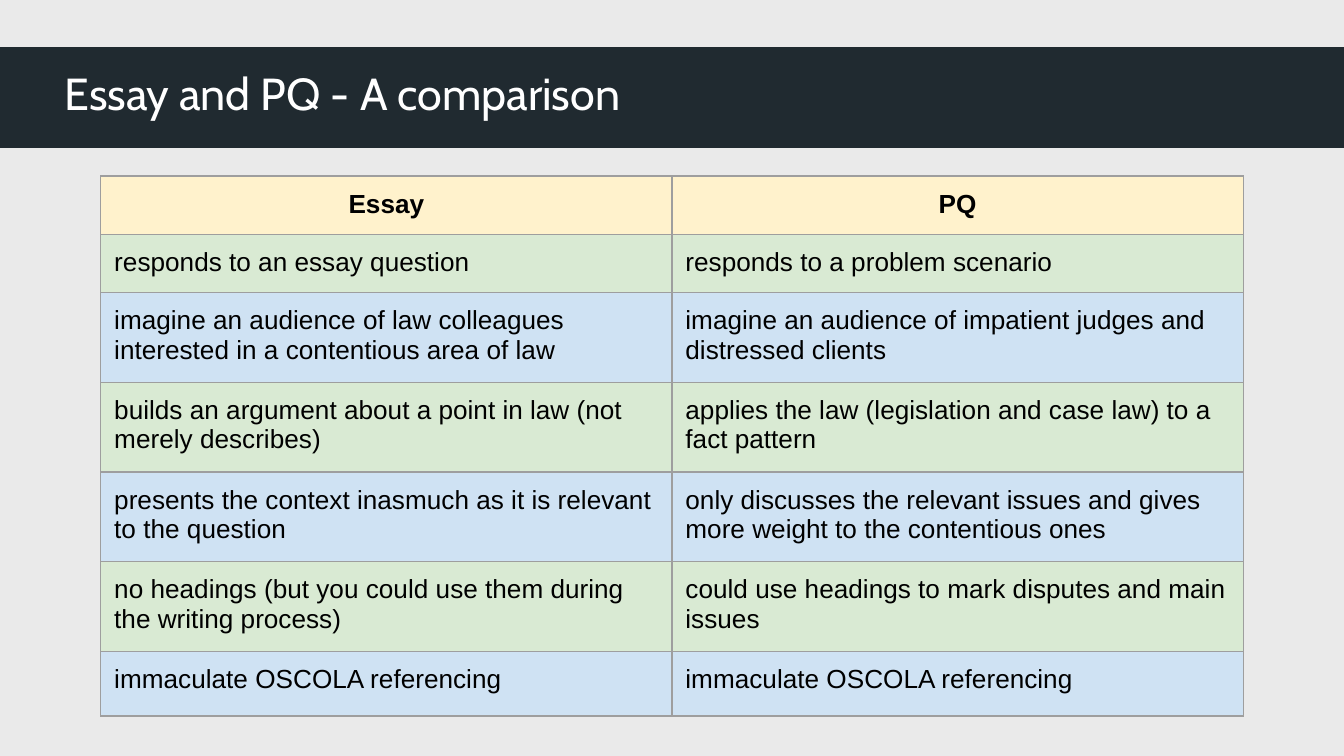
from dataclasses import dataclass

from lxml.etree import SubElement
from pptx import Presentation
from pptx.dml.color import RGBColor
from pptx.enum.shapes import MSO_SHAPE as Shape
from pptx.enum.text import MSO_ANCHOR as Anchor, PP_ALIGN as Align
from pptx.oxml.ns import qn
from pptx.util import Inches, Pt


@dataclass(frozen=True)
class Theme:
    background: str = "EAEAEA"
    band: str = "202A30"
    title_text: str = "FFFFFF"
    body_text: str = "000000"
    border: str = "9E9E9E"
    header_fill: str = "FFF2CC"
    row_fills: tuple = ("D9EAD3", "CFE2F3")
    title_font: str = "Cabin"
    body_font: str = "Arial"
    title_size: float = 24
    body_size: float = 14
    border_width: float = 0.75


HEADINGS = ("Essay", "PQ")
COMPARISON = [
    ("responds to an essay question", "responds to a problem scenario"),
    ("imagine an audience of law colleagues interested in a contentious area of law",
     "imagine an audience of impatient judges and distressed clients"),
    ("builds an argument about a point in law (not merely describes)",
     "applies the law (legislation and case law) to a fact pattern"),
    ("presents the context inasmuch as it is relevant to the question",
     "only discusses the relevant issues and gives more weight to the contentious ones"),
    ("no headings (but you could use them during the writing process)",
     "could use headings to mark disputes and main issues"),
    ("immaculate OSCOLA referencing", "immaculate OSCOLA referencing"),
]
ROW_HEIGHTS = (0.4, 0.4, 0.62, 0.62, 0.62, 0.62, 0.48)


def set_fill(fill, color):
    fill.solid()
    fill.fore_color.rgb = RGBColor.from_string(color)


def write_text(frame, text, *, font, size, color, bold=False,
               align=Align.LEFT, anchor=Anchor.TOP, inset=0):
    frame.word_wrap = True
    frame.vertical_anchor = anchor
    frame.margin_left = frame.margin_right = Inches(inset)
    frame.margin_top = frame.margin_bottom = Inches(inset)
    paragraph = frame.paragraphs[0]
    paragraph.alignment = align
    run = paragraph.add_run()
    run.text = text
    run.font.name = font
    run.font.size = Pt(size)
    run.font.bold = bold
    run.font.color.rgb = RGBColor.from_string(color)


def set_borders(cell, color, width):
    properties = cell._tc.get_or_add_tcPr()
    for index, side in enumerate(("lnL", "lnR", "lnT", "lnB")):
        line = SubElement(properties, qn(f"a:{side}"), w=str(Pt(width)))
        fill = SubElement(line, qn("a:solidFill"))
        SubElement(fill, qn("a:srgbClr"), val=color)
        # Borders must come before the cell fill.
        properties.insert(index, line)


class SlideBuilder:
    def __init__(self, slide, theme):
        self.slide = slide
        self.theme = theme
        set_fill(slide.background.fill, theme.background)

    def band(self, left, top, width, height):
        shape = self.slide.shapes.add_shape(
            Shape.RECTANGLE, Inches(left), Inches(top), Inches(width), Inches(height))
        shape.shadow.inherit = False
        set_fill(shape.fill, self.theme.band)
        shape.line.fill.background()

    def title(self, text, left, top, width, height):
        box = self.slide.shapes.add_textbox(
            Inches(left), Inches(top), Inches(width), Inches(height))
        write_text(box.text_frame, text, font=self.theme.title_font,
                   size=self.theme.title_size, color=self.theme.title_text,
                   anchor=Anchor.MIDDLE)

    def table(self, rows, left, top, frame_size, column_width, row_heights):
        """Add a table whose first row is the header and whose body rows alternate."""
        side = Inches(frame_size)
        frame = self.slide.shapes.add_table(
            len(rows), len(rows[0]), Inches(left), Inches(top), side, side)
        table = frame.table
        for column in table.columns:
            column.width = Inches(column_width)
        for row_index, (texts, height) in enumerate(zip(rows, row_heights)):
            table.rows[row_index].height = Inches(height)
            for column_index, text in enumerate(texts):
                self.cell(table.cell(row_index, column_index), text, row_index)
        # A frame smaller than its rows keeps them from being stretched.
        frame.width = frame.height = side

    def cell(self, cell, text, row_index):
        theme = self.theme
        header = row_index == 0
        body_fill = theme.row_fills[(row_index - 1) % len(theme.row_fills)]
        set_fill(cell.fill, theme.header_fill if header else body_fill)
        set_borders(cell, theme.border, theme.border_width)
        write_text(cell.text_frame, text, font=theme.body_font, size=theme.body_size,
                   color=theme.body_text, bold=header,
                   align=Align.CENTER if header else Align.LEFT)
        cell.margin_left = cell.margin_right = Inches(0.1)
        cell.margin_top = cell.margin_bottom = Inches(0.1)


def main():
    presentation = Presentation()
    presentation.slide_width = Inches(10)
    presentation.slide_height = Inches(10) * 9 // 16
    slide = presentation.slides.add_slide(presentation.slide_layouts[6])

    builder = SlideBuilder(slide, Theme())
    builder.band(0, 0.35, 10, 0.75)
    builder.title("Essay and PQ - A comparison", 0.48, 0.31, 7.16, 0.76)
    builder.table([HEADINGS, *COMPARISON], 0.75, 1.31, 3.28, 4.25, ROW_HEIGHTS)
    presentation.save("out.pptx")


if __name__ == "__main__":
    main()
